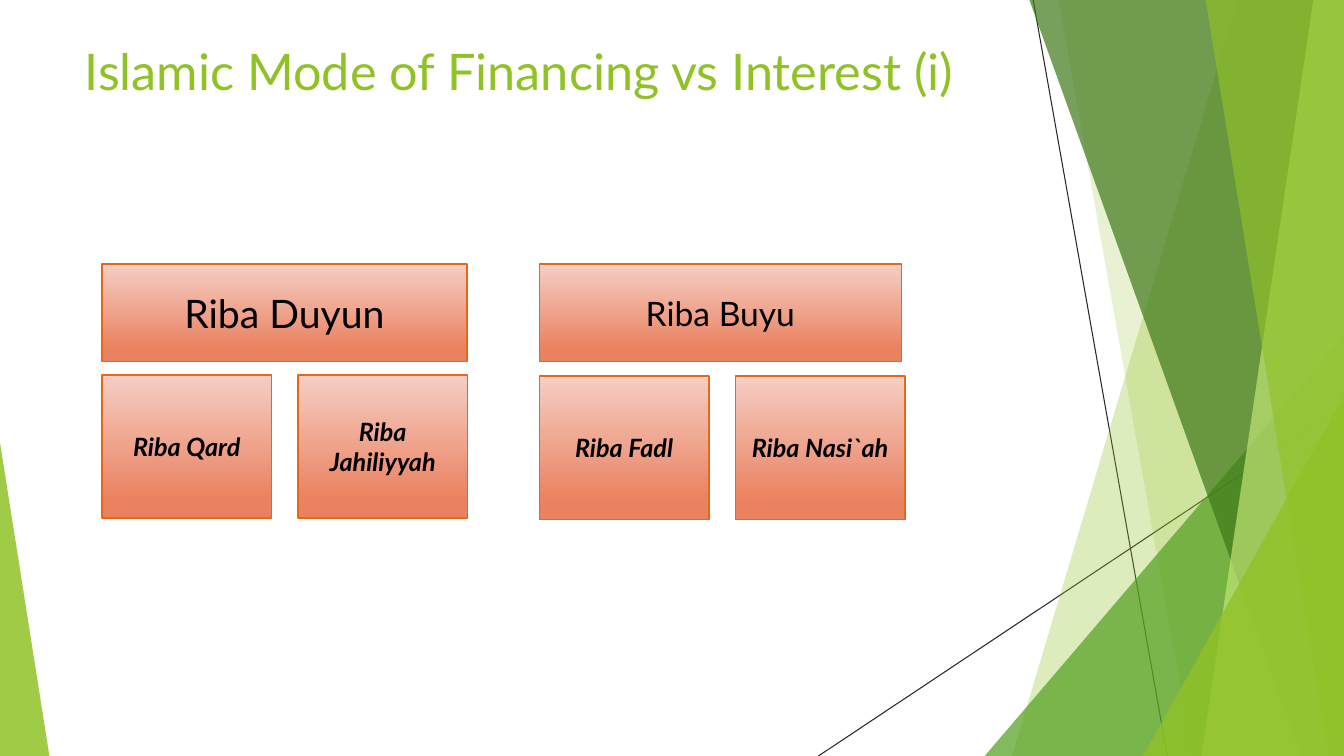
import pptx
import pptx.dml.color
import pptx.enum.shapes
import pptx.enum.text
import pptx.oxml
import pptx.oxml.ns
import pptx.util

Pt = pptx.util.Pt
RGBColor = pptx.dml.color.RGBColor
SHAPE = pptx.enum.shapes.MSO_SHAPE
ANCHOR = pptx.enum.text.MSO_ANCHOR
ALIGN = pptx.enum.text.PP_ALIGN

LIME = RGBColor(0x90, 0xC2, 0x26)
GREEN = RGBColor(0x54, 0xA0, 0x21)
FOREST = RGBColor(0x3F, 0x78, 0x19)
PALE_LIME = RGBColor(0xC0, 0xE4, 0x74)
CHARCOAL = RGBColor(0x26, 0x26, 0x26)
PEACH = RGBColor(0xF5, 0xCE, 0xC5)
CORAL = RGBColor(0xEA, 0x81, 0x5F)
ORANGE = RGBColor(0xE7, 0x66, 0x18)
BLACK = RGBColor(0, 0, 0)
WIDTH, HEIGHT = 960, 540


def write(box, text, anchor, align, formats):
    frame = box.text_frame
    frame.word_wrap = True
    frame.vertical_anchor = anchor
    para = frame.paragraphs[0]
    para.alignment = align
    span = para.add_run()
    span.text = text
    span.font.name = "Lato"
    for name, value in formats.items():
        if name == "color":
            span.font.color.rgb = value
        else:
            setattr(span.font, name, value)


deck = pptx.Presentation()
deck.slide_width = Pt(WIDTH)
deck.slide_height = Pt(HEIGHT)
page = deck.slides.add_slide(deck.slide_layouts[5])

for start_x, start_y, end_x, end_y in [(738, 0, 833.8, HEIGHT), (WIDTH, 290.2, 584.6, HEIGHT)]:
    ray = page.shapes.add_connector(
        pptx.enum.shapes.MSO_CONNECTOR.STRAIGHT, Pt(start_x), Pt(start_y), Pt(end_x), Pt(end_y))
    ray.line.color.rgb = CHARCOAL
    ray.line.width = Pt(0.75)
    ray._element.spPr.append(pptx.oxml.parse_xml(
        '<a:effectLst xmlns:a="http://schemas.openxmlformats.org/drawingml/2006/main"/>'))

facets = [
    ("band", (884.2, 722.9), LIME, 30),
    ("band", (756, 851.8), LIME, 20),
    ("triangle", (703.4, 239.8, 256.6, 1), GREEN, 72),
    ("band", (735.1, 929.5), FOREST, 70),
    ("band", (938.2, 858.2), PALE_LIME, 70),
    ("band", (861.1, 949), LIME, 65),
    ("triangle", (816.5, 283, 143.5, 1), LIME, 80),
    ("triangle", (0, 316.1, 35.3, 0), LIME, 85),
]
for kind, place, color, opacity in facets:
    if kind == "band":
        top_x, bottom_x = place
        builder = page.shapes.build_freeform(Pt(top_x), Pt(-0.6))
        builder.add_line_segments(
            [(Pt(WIDTH), Pt(-0.6)), (Pt(WIDTH), Pt(HEIGHT)), (Pt(bottom_x), Pt(HEIGHT))], close=True)
        facet = builder.convert_to_shape()
    else:
        left, top, width, apex = place
        facet = page.shapes.add_shape(
            SHAPE.ISOSCELES_TRIANGLE, Pt(left), Pt(top), Pt(width), Pt(HEIGHT - top))
        facet.adjustments[0] = apex
    facet.shadow.inherit = False
    facet.line.fill.background()
    facet.fill.solid()
    facet.fill.fore_color.rgb = color
    tint = facet._element.spPr.find(".//" + pptx.oxml.ns.qn("a:srgbClr"))
    tint.append(pptx.oxml.parse_xml(
        '<a:alpha xmlns:a="http://schemas.openxmlformats.org/drawingml/2006/main" '
        f'val="{opacity * 1000}"/>'))

title = page.shapes.title
for name, value in {"left": 53.3, "top": 25.2, "width": 676.8, "height": 59}.items():
    setattr(title, name, Pt(value))
write(title, "Islamic Mode of Financing vs Interest (i)", ANCHOR.TOP, ALIGN.LEFT,
      {"size": Pt(36), "color": LIME})

heading_top, heading_height = 188.6, 69.8
kind_width, kind_height, kind_step = 121.2, 102.4, 140
groups = [
    (72.8, 260.8, "Riba Duyun", 28, 267.8, ["Riba Qard", "Riba Jahiliyyah"]),
    (385.2, 258.6, "Riba Buyu", 24, 268.6, ["Riba Fadl", "Riba Nasi`ah"]),
]
for left, width, heading, size, kind_top, kinds in groups:
    cards = [(heading, left, heading_top, width, heading_height, size, {})]
    for index, name in enumerate(kinds):
        cards.append((name, left + index * kind_step, kind_top, kind_width, kind_height, 18,
                      {"bold": True, "italic": True}))
    for text, x, y, card_width, card_height, text_size, style in cards:
        box = page.shapes.add_shape(
            SHAPE.RECTANGLE, Pt(x), Pt(y), Pt(card_width), Pt(card_height))
        box.shadow.inherit = False
        box.fill.gradient()
        box.fill.gradient_angle = 270
        for stop, color, position in zip(box.fill.gradient_stops, (PEACH, CORAL), (0, 0.88)):
            stop.color.rgb = color
            stop.position = position
        box.line.color.rgb = ORANGE
        box.line.width = Pt(1)
        write(box, text, ANCHOR.MIDDLE, ALIGN.CENTER,
              {"size": Pt(text_size), "color": BLACK, **style})

deck.save("out.pptx")
